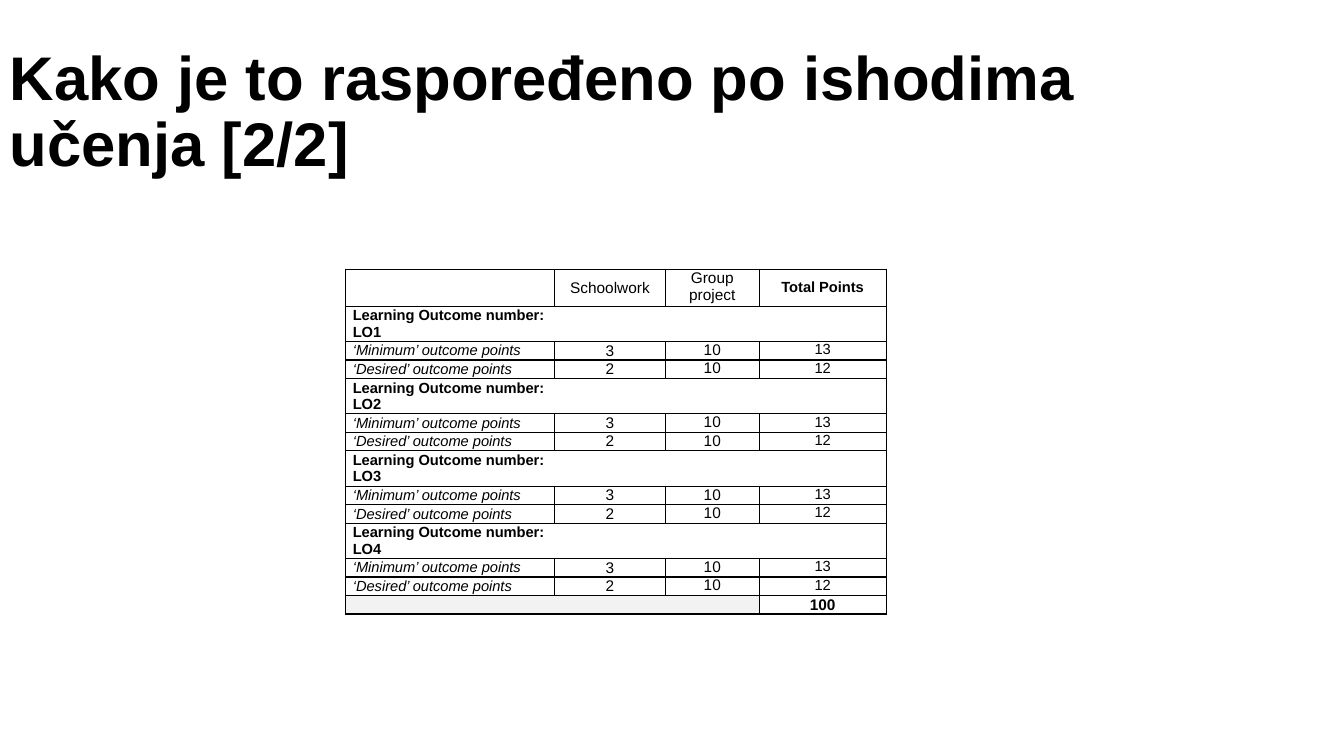
import pptx
import pptx.dml.color
import pptx.enum.text
import pptx.oxml.ns
import pptx.util
from dataclasses import dataclass
from lxml import etree

Inches = pptx.util.Inches
Pt = pptx.util.Pt
RGB = pptx.dml.color.RGBColor.from_string
MIDDLE = pptx.enum.text.MSO_ANCHOR.MIDDLE
TOP = pptx.enum.text.MSO_ANCHOR.TOP
CENTER = pptx.enum.text.PP_ALIGN.CENTER
LEFT = pptx.enum.text.PP_ALIGN.LEFT
qn = pptx.oxml.ns.qn


@dataclass(frozen=True)
class Theme:
    font: str = "Arial"
    ink: str = "000000"
    paper: str = "FFFFFF"
    shade: str = "F2F2F2"
    title: float = 44
    label: float = 10.5
    number: float = 11
    border: float = 1


THEME = Theme()
COL_WIDTHS = [2.07, 1.1, 0.93, 1.26]
HEADER_H, OUTCOME_H, POINTS_H = 0.34, 0.32, 0.17
OUTCOMES = ["Learning Outcome number: LO1", "Learning Outcome number: LO2",
            "Learning Outcome number: LO3", "Learning Outcome number: LO4"]
POINTS = [["‘Minimum’ outcome points", "3", "10", "13"],
          ["‘Desired’ outcome points", "2", "10", "12"]]


def add_run(p, text, size, bold=False, italic=False):
    r = p.add_run()
    r.text = text
    r.font.name = THEME.font
    r.font.size = Pt(size)
    r.font.bold = bold
    r.font.italic = italic
    r.font.color.rgb = RGB(THEME.ink)


def set_borders(cell, sides):
    """Draw the named sides (of L, R, T, B) and clear the others."""
    tcPr = cell._tc.get_or_add_tcPr()
    for side in "LRTB":
        ln = etree.SubElement(tcPr, qn(f"a:ln{side}"), w=str(Pt(THEME.border)))
        if side in sides:
            fill = etree.SubElement(ln, qn("a:solidFill"))
            etree.SubElement(fill, qn("a:srgbClr"), val=THEME.ink)
        else:
            etree.SubElement(ln, qn("a:noFill"))


def fill_cell(cell, text="", size=THEME.number, bold=False, italic=False,
              align=CENTER, anchor=MIDDLE, sides="LRTB", fill=THEME.paper):
    set_borders(cell, sides)
    cell.fill.solid()
    cell.fill.fore_color.rgb = RGB(fill)
    cell.margin_left = cell.margin_right = Inches(0.07)
    cell.margin_top = cell.margin_bottom = 0
    cell.vertical_anchor = anchor
    p = cell.text_frame.paragraphs[0]
    p.alignment = align
    if text:
        add_run(p, text, size, bold, italic)
    else:
        # Small type keeps an empty cell from stretching its row
        etree.SubElement(p._p, qn("a:endParaRPr"), sz=str(int(size * 100)))


def open_sides(col, last):
    """Sides of a cell in a band of columns 0 to last without inner rules."""
    return "TB" + ("L" if col == 0 else "") + ("R" if col == last else "")


def add_title(slide, left, top, width, height):
    tf = slide.shapes.add_textbox(Inches(left), Inches(top),
                                  Inches(width), Inches(height)).text_frame
    tf.word_wrap = True
    tf.vertical_anchor = MIDDLE
    p = tf.paragraphs[0]
    p.line_spacing = 0.9
    add_run(p, "Kako je to raspoređeno po ishodima učenja [2/2]",
            THEME.title, bold=True)


def add_points_table(slide, left, top):
    heights = ([HEADER_H] + [OUTCOME_H, POINTS_H, POINTS_H] * len(OUTCOMES)
               + [POINTS_H])
    table = slide.shapes.add_table(
        len(heights), len(COL_WIDTHS), Inches(left), Inches(top),
        Inches(sum(COL_WIDTHS)), Inches(sum(heights))).table
    table.first_row = table.horz_banding = False
    for column, width in zip(table.columns, COL_WIDTHS):
        column.width = Inches(width)
    for row, height in zip(table.rows, heights):
        row.height = Inches(height)

    # Header
    fill_cell(table.cell(0, 0))
    fill_cell(table.cell(0, 1), "Schoolwork")
    fill_cell(table.cell(0, 2), "Group project", anchor=TOP)
    fill_cell(table.cell(0, 3), "Total Points", THEME.label, bold=True)

    # One band and two rows of points for each outcome
    last = len(COL_WIDTHS) - 1
    for i, outcome in enumerate(OUTCOMES):
        band = 1 + i * (1 + len(POINTS))
        for col in range(last + 1):
            fill_cell(table.cell(band, col), outcome if col == 0 else "",
                      THEME.label, bold=True, align=LEFT,
                      sides=open_sides(col, last))
        for row, (label, *numbers) in enumerate(POINTS, band + 1):
            fill_cell(table.cell(row, 0), label, THEME.label, italic=True,
                      align=LEFT)
            for col, number in enumerate(numbers, 1):
                fill_cell(table.cell(row, col), number,
                          THEME.label if col == last else THEME.number,
                          anchor=MIDDLE if col == 1 else TOP)

    # Grand total
    total = len(heights) - 1
    for col in range(last):
        fill_cell(table.cell(total, col), sides=open_sides(col, last - 1),
                  fill=THEME.shade)
    fill_cell(table.cell(total, last), "100", bold=True)


def main():
    prs = pptx.Presentation()
    prs.slide_width, prs.slide_height = Inches(13.33), Inches(7.5)
    slide = prs.slides.add_slide(prs.slide_layouts[6])
    add_title(slide, 0, 0.4, 11.5, 1.45)
    add_points_table(slide, 3.43, 2.67)
    prs.save("out.pptx")


if __name__ == "__main__":
    main()
